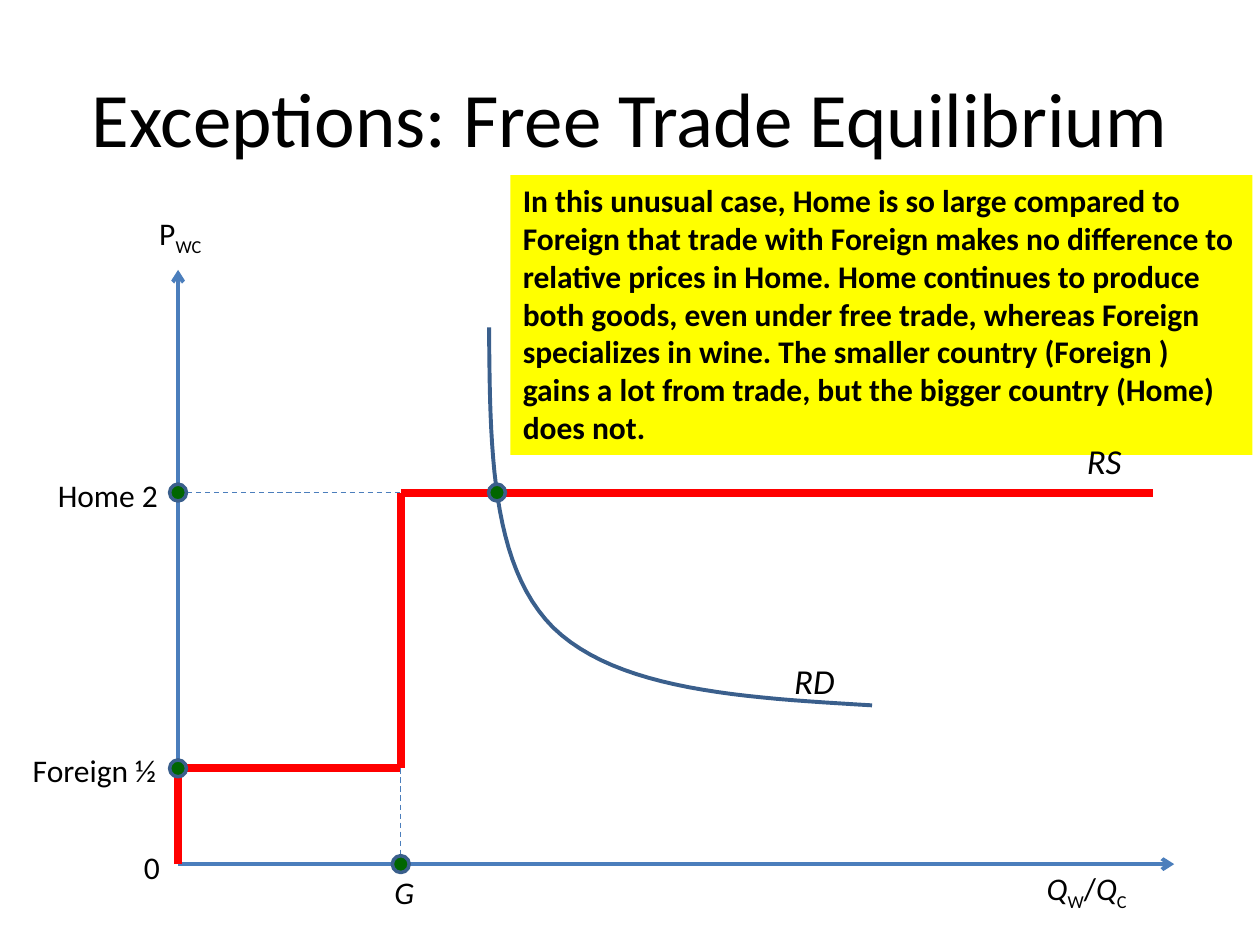
"""Build the free trade equilibrium slide with its RS and RD diagram."""
from lxml import etree
from pptx import Presentation
from pptx.dml.color import RGBColor
from pptx.enum.dml import MSO_LINE
from pptx.enum.shapes import MSO_CONNECTOR, MSO_SHAPE
from pptx.enum.text import MSO_ANCHOR, PP_ALIGN
from pptx.oxml.ns import qn
from pptx.util import Cm, Pt

LEFT, CENTER = PP_ALIGN.LEFT, PP_ALIGN.CENTER
TOP, MIDDLE = MSO_ANCHOR.TOP, MSO_ANCHOR.MIDDLE
DASH = MSO_LINE.DASH
COLORS = {
    "text": "000000",
    "note": "FFFF00",
    "axis": "4B7EBC",
    "supply": "FF0000",
    "demand": "3A5F8C",
    "dot": "006600",
}
COLORS = {part: RGBColor.from_string(value) for part, value in COLORS.items()}


def write(frame, *runs, size=18, bold=False, align=LEFT, anchor=TOP):
    """Fill a frame with (text, style) runs; style holds i (italic) or s (subscript)."""
    frame.word_wrap = True
    frame.vertical_anchor = anchor
    paragraph = frame.paragraphs[0]
    paragraph.alignment = align
    for text, style in runs:
        run = paragraph.add_run()
        run.text = text
        run.font.name = "Calibri"
        run.font.size = Pt(size)
        run.font.bold = bold
        run.font.italic = "i" in style
        run.font.color.rgb = COLORS["text"]
        if "s" in style:
            run._r.get_or_add_rPr().set("baseline", "-25000")


def draw_line(start, end, color, width, dash=None, arrow=False):
    """Draw a straight line between two points given in centimetres."""
    connector = slide.shapes.add_connector(
        MSO_CONNECTOR.STRAIGHT, *(Cm(value) for value in start + end))
    connector.line.color.rgb = COLORS[color]
    connector.line.width = Pt(width)
    if dash:
        connector.line.dash_style = dash
    if arrow:
        etree.SubElement(connector.line._get_or_add_ln(), qn("a:tailEnd"), type="arrow")
    etree.SubElement(connector._element.spPr, qn("a:effectLst"))


prs = Presentation()
prs.slide_width, prs.slide_height = Cm(25.4), Cm(19.05)
slide = prs.slides.add_slide(prs.slide_layouts[5])

title = slide.shapes.title
title.left, title.top, title.width, title.height = Cm(1.27), Cm(0.76), Cm(22.86), Cm(3.18)
write(title.text_frame, ("Exceptions: Free Trade Equilibrium", ""),
      size=44, align=CENTER, anchor=MIDDLE)

note = slide.shapes.add_shape(MSO_SHAPE.RECTANGLE, Cm(10.29), Cm(3.53), Cm(14.96), Cm(5.64))
note.shadow.inherit = False
note.fill.solid()
note.fill.fore_color.rgb = COLORS["note"]
note.line.fill.background()
write(note.text_frame, (
    "In this unusual case, Home is so large compared to Foreign that trade with "
    "Foreign makes no difference to relative prices in Home. Home continues to "
    "produce both goods, even under free trade, whereas Foreign specializes in "
    "wine. The smaller country (Foreign ) gains a lot from trade, but the bigger "
    "country (Home) does not.", ""), bold=True)

origin_x, origin_y = 3.59, 17.42
home_price, foreign_price = 9.93, 15.49
step_x, equilibrium_x = 8.08, 10.02

draw_line((origin_x, origin_y), (origin_x, 5.44), "axis", 2.25, arrow=True)
draw_line((origin_x, origin_y), (23.67, origin_y), "axis", 2.25, arrow=True)

supply_steps = [
    (origin_x, origin_y), (origin_x, foreign_price), (step_x, foreign_price),
    (step_x, home_price), (23.24, home_price),
]
for start, end in zip(supply_steps, supply_steps[1:]):
    draw_line(start, end, "supply", 4.5)
draw_line((step_x, foreign_price), (step_x, origin_y), "axis", 0.75, dash=DASH)
draw_line((origin_x, home_price), (step_x, home_price), "axis", 0.75, dash=DASH)

demand_arcs = [
    ((9.86, 6.6), (9.88, 8.99), (9.88, 11.38), (11.15, 12.65)),
    ((11.15, 12.65), (12.45, 13.92), (15.01, 14.07), (17.58, 14.22)),
]
arc_steps = 24
demand_points = []
for arc in demand_arcs:
    for step in range(arc_steps + 1):
        t = step / arc_steps
        weights = ((1 - t) ** 3, 3 * t * (1 - t) ** 2, 3 * t ** 2 * (1 - t), t ** 3)
        demand_points.append(tuple(
            Cm(sum(w * value for w, value in zip(weights, axis))) for axis in zip(*arc)))
builder = slide.shapes.build_freeform(*demand_points[0])
builder.add_line_segments(demand_points[1:], close=False)
demand = builder.convert_to_shape()
demand.shadow.inherit = False
demand.fill.background()
demand.line.color.rgb = COLORS["demand"]
demand.line.width = Pt(2.25)

dot_size = 0.34
for x, y in [(origin_x, home_price), (origin_x, foreign_price),
             (step_x, origin_y), (equilibrium_x, home_price)]:
    dot = slide.shapes.add_shape(MSO_SHAPE.OVAL, Cm(x - dot_size / 2), Cm(y - dot_size / 2),
                                 Cm(dot_size), Cm(dot_size))
    dot.shadow.inherit = False
    dot.fill.solid()
    dot.fill.fore_color.rgb = COLORS["dot"]
    dot.line.color.rgb = COLORS["demand"]
    dot.line.width = Pt(2)

labels = [
    (2.39, 4.19, 2.49, 18, CENTER, [("P", ""), ("WC", "s")]),
    (20.85, 17.4, 2.49, 18, LEFT,
     [("Q", "i"), ("W", "s"), ("/", ""), ("Q", "i"), ("C", "s")]),
    (2.54, 16.97, 1.04, 18, CENTER, [("0", "")]),
    (7.7, 17.48, 0.91, 18, LEFT, [("G", "i")]),
    (15.67, 13.18, 1.5, 20, CENTER, [("RD", "i")]),
    (21.51, 8.74, 1.5, 20, CENTER, [("RS", "i")]),
    (0.74, 9.47, 2.87, 18, CENTER, [("Home 2", "")]),
    (0.38, 15.01, 3.2, 18, CENTER, [("Foreign ½ ", "")]),
]
for left, top, width, size, align, runs in labels:
    label = slide.shapes.add_textbox(Cm(left), Cm(top), Cm(width), Cm(size * 0.056))
    write(label.text_frame, *runs, size=size, align=align)

prs.save("out.pptx")
